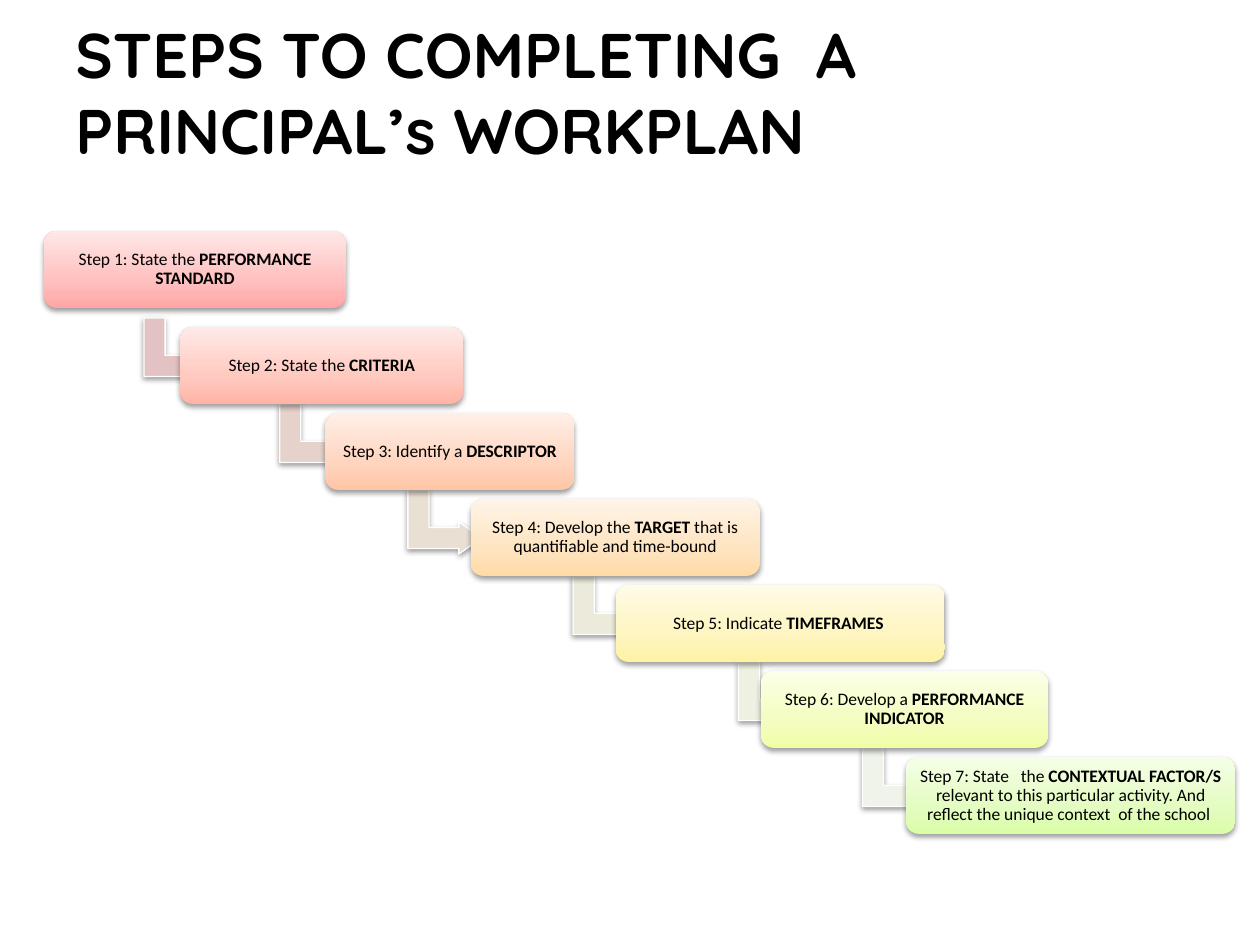
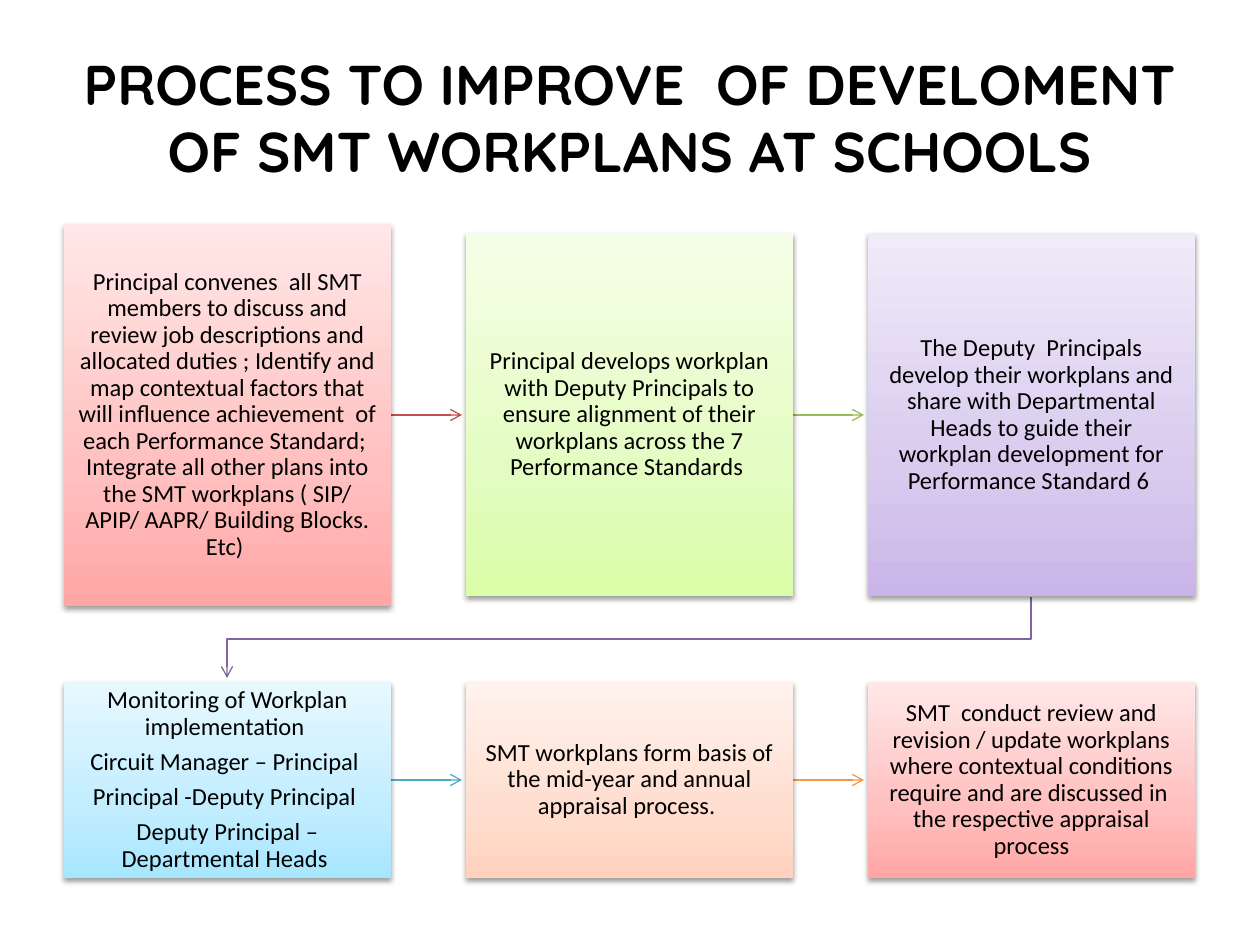
from lxml.etree import SubElement
from pptx import Presentation
from pptx.dml.color import RGBColor
from pptx.enum.shapes import MSO_CONNECTOR, MSO_SHAPE
from pptx.enum.text import MSO_ANCHOR, PP_ALIGN
from pptx.oxml.ns import qn
from pptx.util import Emu, Pt

PX = 914400 // 126
HEAD, BODY = "Quicksand", "Calibri"

INK = {
    "black": "000000", "white": "FFFFFF",
    "red": "C0504D", "green": "9BBB59", "purple": "8064A2",
    "blue": "4BACC6", "orange": "F79646",
}
# gradient colours from bottom to top
FADE = {
    "red": ("FFA6A5", "FFC0BF", "FFE7E7"),
    "coral": ("FFB4A5", "FFC9BF", "FFEAE7"),
    "peach": ("FFC5A5", "FFD5BF", "FFEFE7"),
    "amber": ("FFDAA5", "FEE4C0", "FFF4E7"),
    "yellow": ("FFF2A5", "FEF5C0", "FFFBE7"),
    "lime": ("F1FEA6", "F4FDC1", "FBFFE7"),
    "green": ("DAFDA7", "E4FCC2", "F5FFE7"),
    "purple": ("C9B5E8", "D8CBEE", "F0EAF9"),
    "blue": ("A7E6FF", "C1EDFF", "E7F8FF"),
    "orange": ("FFD2BD", "FFDED0", "FFF2ED"),
}
STOPS = (0, 35, 100)

# text (bold between stars), width, fade, colour of the arrow to the next step
STEPS = [
    ("Step 1: State the *PERFORMANCE STANDARD*", 302, "red", "E2C2C2"),
    ("Step 2: State the *CRITERIA*", 283, "coral", "E5D2CA"),
    ("Step 3: Identify a *DESCRIPTOR*", 249, "peach", "E9DFD2"),
    ("Step 4: Develop the *TARGET* that is quantifiable and time-bound",
     289, "amber", "ECEADA"),
    ("Step 5: Indicate *TIMEFRAMES *", 329, "yellow", "EEF0E2"),
    ("Step 6: Develop a *PERFORMANCE INDICATOR*", 287, "lime", "EFF3EA"),
    ("Step 7: State   the *CONTEXTUAL FACTOR/S *relevant to this particular "
     "activity. And reflect the unique context  of the school ",
     329, "green", None),
]

# paragraphs, height, fade, colour of the line to the next stage
STAGES = [
    (["Principal convenes  all SMT members to discuss and review job "
      "descriptions and allocated duties ; Identify and map contextual factors "
      "that will influence achievement  of each Performance Standard;  "
      "Integrate all other plans into the SMT workplans ( SIP/ APIP/ AAPR/ "
      "Building Blocks. Etc) "], 382, "red", "red"),
    (["Principal develops workplan with Deputy Principals to ensure alignment "
      "of their workplans across the 7 Performance Standards "],
     363, "green", "green"),
    (["The Deputy  Principals develop their workplans and share with "
      "Departmental Heads to guide their workplan development for Performance "
      "Standard 6 "], 363, "purple", "purple"),
    (["Monitoring of Workplan implementation ", "Circuit Manager – Principal ",
      "Principal -Deputy Principal ",
      "Deputy Principal – Departmental Heads "], 196, "blue", "blue"),
    (["SMT workplans form basis of the mid-year and annual appraisal process. "],
     196, "orange", "orange"),
    (["SMT  conduct review and revision / update workplans where contextual "
      "conditions require and are discussed in  the respective appraisal "
      "process"], 196, "red", None),
]


def px(*nums):
    return [Emu(round(n * PX)) for n in nums]


def rgb(code):
    return RGBColor.from_string(code)


def sub(node, tag, **attrs):
    return SubElement(node, qn("a:" + tag), attrs)


def shade(shape):
    """Add the soft shadow below a shape."""
    shape.shadow.inherit = False
    effects = shape._element.spPr.find(qn("a:effectLst"))
    drop = sub(effects, "outerShdw", blurRad="40000", dist="20000",
               dir="5400000", rotWithShape="0")
    sub(sub(drop, "srgbClr", val=INK["black"]), "alpha", val="38000")


def title(slide, text, top, height, size, align):
    box = slide.shapes.add_textbox(*px(63, top, 1134, height))
    frame = box.text_frame
    frame.word_wrap = True
    frame.vertical_anchor = MSO_ANCHOR.MIDDLE
    para = frame.paragraphs[0]
    para.text, para.alignment = text, align
    font = para.font
    font.name, font.size, font.bold = HEAD, Pt(size), True
    font.color.rgb = rgb(INK["black"])


def card(slide, kind, place, fade, texts, size, inset):
    box = slide.shapes.add_shape(kind, *px(*place))
    shade(box)
    box.line.fill.background()
    box.fill.gradient()
    box.fill.gradient_angle = 90
    stops = box._element.spPr.find(qn("a:gradFill")).find(qn("a:gsLst"))
    for old in list(stops):
        stops.remove(old)
    for stop, code in zip(STOPS, FADE[fade]):
        sub(sub(stops, "gs", pos=str(stop * 1000)), "srgbClr", val=code)

    frame = box.text_frame
    frame.word_wrap = True
    frame.vertical_anchor = MSO_ANCHOR.MIDDLE
    frame.margin_left = frame.margin_right = px(inset)[0]
    frame.margin_top = frame.margin_bottom = px(inset)[0]
    for n, text in enumerate(texts):
        para = frame.add_paragraph() if n else frame.paragraphs[0]
        para.alignment = PP_ALIGN.CENTER
        para.line_spacing = 0.9
        para.space_after = Pt(size * 0.35)
        para.font.name, para.font.size = BODY, Pt(size)
        para.font.color.rgb = rgb(INK["black"])
        for part, words in enumerate(text.split("*")):
            if words:
                run = para.add_run()
                run.text = words
                if part % 2:
                    run.font.bold = True


def bend(slide, left, top, color):
    arrow = slide.shapes.add_shape(MSO_SHAPE.BENT_UP_ARROW,
                                   *px(left, top, 64, 74))
    arrow.rotation = 90
    for n, value in enumerate((0.33, 0.25, 0.36)):
        arrow.adjustments[n] = value
    arrow.fill.solid()
    arrow.fill.fore_color.rgb = rgb(color)
    arrow.line.color.rgb = rgb(INK["white"])
    arrow.line.width = Pt(0.75)
    shade(arrow)


def link(slide, points, color):
    """Draw an arrow through the points."""
    if len(points) == 2:
        line = slide.shapes.add_connector(
            MSO_CONNECTOR.STRAIGHT, *px(*points[0], *points[1]))
        sub(line._element.spPr, "effectLst")
    else:
        route = slide.shapes.build_freeform(*points[0], scale=PX)
        route.add_line_segments(points[1:], close=False)
        line = route.convert_to_shape()
        line.fill.background()
        line.shadow.inherit = False
    line.line.color.rgb = rgb(INK[color])
    line.line.width = Pt(0.75)
    sub(line._element.spPr.find(qn("a:ln")), "tailEnd", type="arrow")


def stairs(slide):
    title(slide, "STEPS TO COMPLETING  A PRINCIPAL’s WORKPLAN",
          38, 107, 36, PP_ALIGN.LEFT)
    for n, (text, width, fade, color) in enumerate(STEPS):
        left, top = 35 + 145.2 * n, 241 + 86 * n
        if color:
            bend(slide, left + width / 2 - 37, top + 72, color)
        if n == 0:  # the first step stands a little apart
            left, top = left + 9, top - 10
        card(slide, MSO_SHAPE.ROUNDED_RECTANGLE, (left, top, width, 77),
             fade, [text], 10, 5)


def flow(slide):
    title(slide, "PROCESS TO IMPROVE  OF DEVELOMENT OF SMT WORKPLANS AT SCHOOLS",
          38, 157, 32, PP_ALIGN.CENTER)
    wide, pitch, first = 327, 402, 64
    mids = (415, 780)
    for n, (texts, high, fade, color) in enumerate(STAGES):
        row, col = divmod(n, 3)
        left, mid = first + pitch * col, mids[row]
        if color and col < 2:
            link(slide, [(left + wide, mid), (left + wide + 71, mid)], color)
        elif color:
            start, end = left + wide // 2, first + wide // 2
            link(slide, [(start, 597), (start, 639), (end, 639), (end, 678)],
                 color)
        card(slide, MSO_SHAPE.RECTANGLE, (left, mid - high / 2, wide, high),
             fade, texts, 14, 14)


def main():
    deck = Presentation()
    deck.slide_width, deck.slide_height = px(1260, 945)
    for draw in (stairs, flow):
        draw(deck.slides.add_slide(deck.slide_layouts[6]))
    deck.save("out.pptx")


if __name__ == "__main__":
    main()
